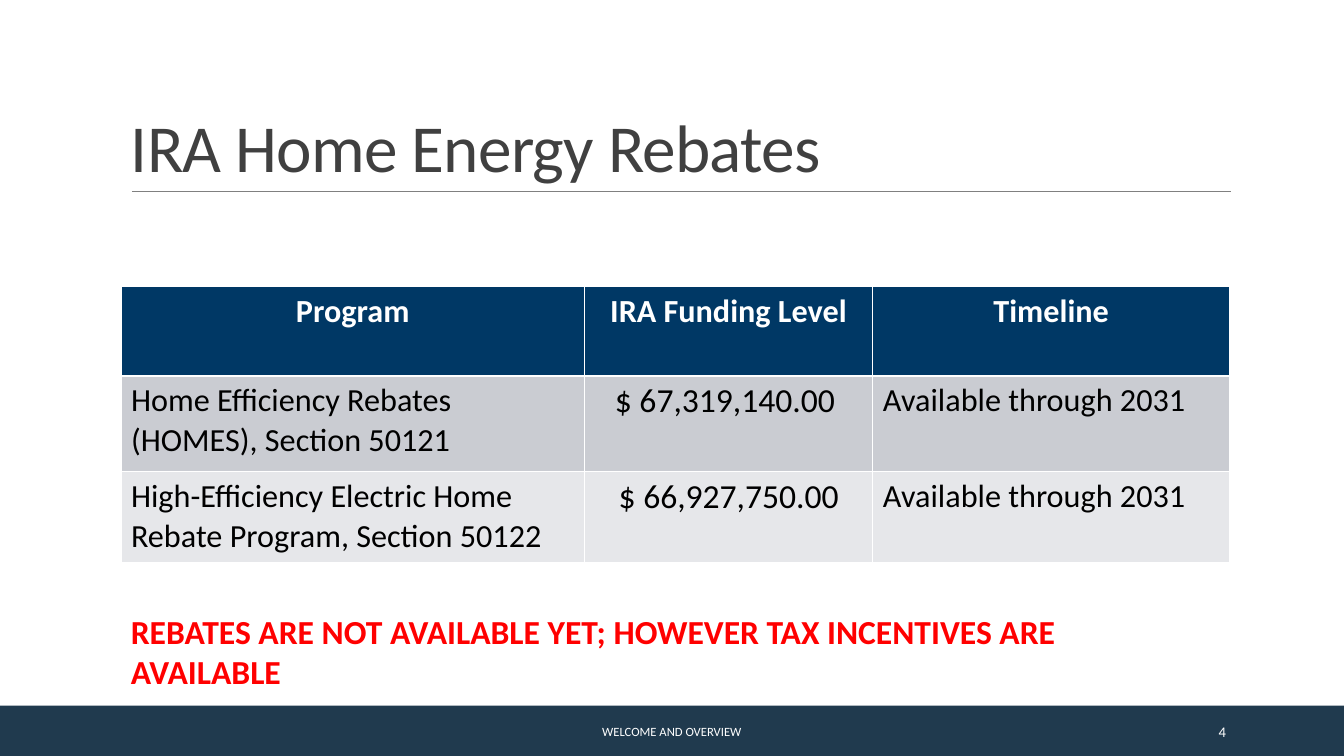
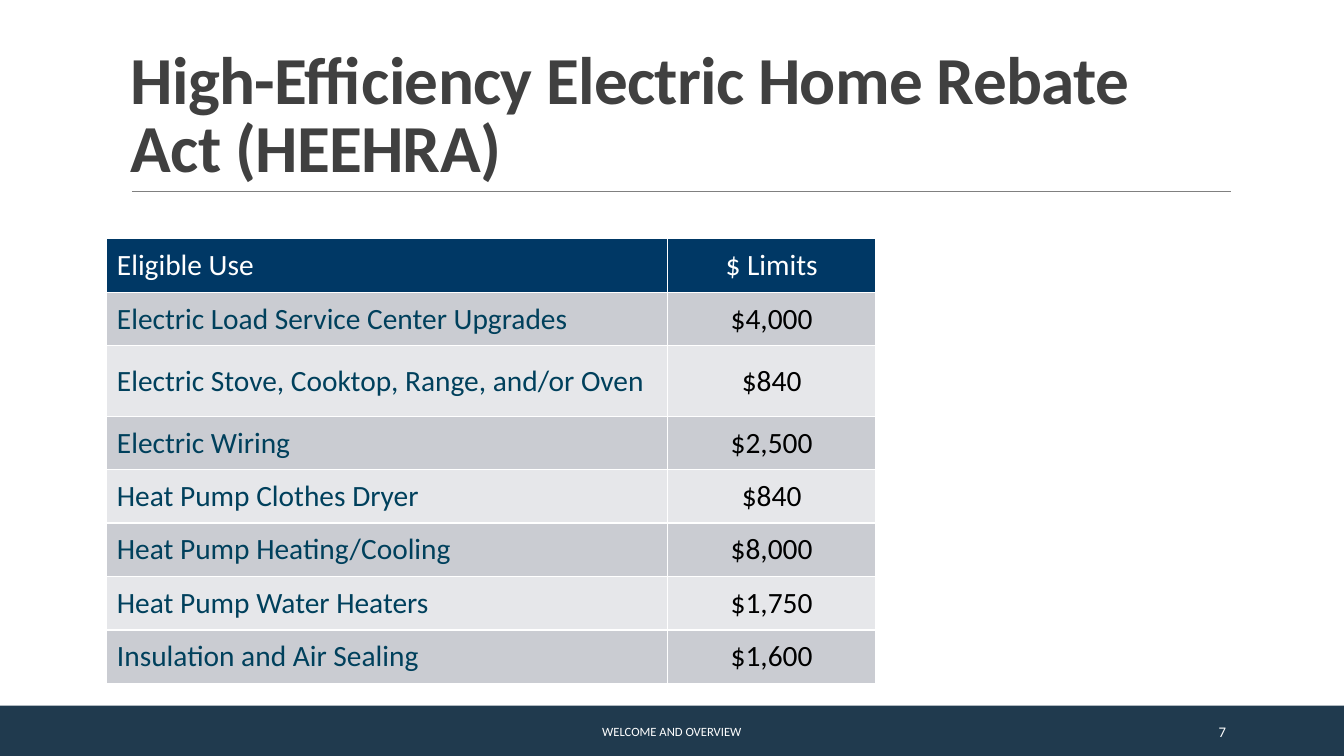
"""Build two slides on home energy rebates."""

from dataclasses import dataclass

import lxml.etree
import pptx
import pptx.dml.color
import pptx.enum.shapes
import pptx.enum.text
import pptx.oxml.ns
import pptx.presentation
import pptx.slide
import pptx.text.text
import pptx.util

RGB = pptx.dml.color.RGBColor
ALIGN = pptx.enum.text.PP_ALIGN
ANCHOR = pptx.enum.text.MSO_ANCHOR

WHITE = RGB(0xFF, 0xFF, 0xFF)
BLACK = RGB(0x00, 0x00, 0x00)
RED = RGB(0xFF, 0x00, 0x00)
GREY = RGB(0x40, 0x40, 0x40)
RULE = RGB(0x80, 0x80, 0x80)
BAND = RGB(0x20, 0x3A, 0x4E)
NAVY = RGB(0x00, 0x38, 0x65)
TEAL = RGB(0x00, 0x40, 0x5C)
STRIPES = (RGB(0xCA, 0xCC, 0xD2), RGB(0xE6, 0xE7, 0xEA))

FONT = "Calibri"
WIDE = pptx.util.Inches(13.33)
HIGH = pptx.util.Inches(7.5)


@dataclass(frozen=True)
class Box:
    """Place and size in percent of the slide."""

    left: float
    top: float
    width: float
    height: float


@dataclass(frozen=True)
class Style:
    """Look of a paragraph."""

    size: float
    color: RGB
    bold: bool = False
    align: ALIGN = ALIGN.LEFT


@dataclass(frozen=True)
class Grid:
    """Table with its column widths and row heights in percent."""

    left: float
    top: float
    cols: tuple[float, ...]
    rows: tuple[float, ...]
    head: tuple[Style, ...]
    body: tuple[Style, ...]
    anchor: ANCHOR
    cells: tuple[tuple[str, ...], ...]


TITLE = Box(9, 4.13, 82.5, 21.2)
FOOT = Box(30.22, 94.13, 39.53, 5.33)
PAGE = Box(81.22, 94.13, 10.73, 5.33)
NOTE = Box(9, 80.13, 71.48, 12.13)

HEAD = Style(23, WHITE, True, ALIGN.CENTER)
PLAIN = Style(23, BLACK)
FUNDS = Grid(
    9, 37.87, (34.5, 21.45, 26.55), (11.87, 12.67, 12),
    (HEAD,) * 3, (PLAIN, Style(24, BLACK, align=ALIGN.CENTER), PLAIN), ANCHOR.TOP,
    (
        ("Program", "IRA Funding Level", "Timeline"),
        ("Home Efficiency Rebates (HOMES), Section 50121", "$ 67,319,140.00 ",
         "Available through 2031"),
        ("High-Efficiency Electric Home Rebate Program, Section 50122",
         "$ 66,927,750.00", "Available through 2031"),
    ),
)
LIMITS = Grid(
    7.95, 31.6, (41.7, 15.53), (7.07, 7.07, 9.33) + (7.07,) * 5,
    (Style(21, WHITE), Style(21, WHITE, align=ALIGN.CENTER)),
    (Style(21, TEAL), Style(21, BLACK, align=ALIGN.CENTER)), ANCHOR.MIDDLE,
    (
        ("Eligible Use", "$ Limits"),
        ("Electric Load Service Center Upgrades", "$4,000"),
        ("Electric Stove, Cooktop, Range, and/or Oven", "$840"),
        ("Electric Wiring", "$2,500"),
        ("Heat Pump Clothes Dryer", "$840"),
        ("Heat Pump Heating/Cooling", "$8,000"),
        ("Heat Pump Water Heaters", "$1,750"),
        ("Insulation and Air Sealing", "$1,600"),
    ),
)


def across(share: float) -> int:
    """Turn a percent of the slide width into a length."""
    return round(WIDE * share / 100)


def down(share: float) -> int:
    """Turn a percent of the slide height into a length."""
    return round(HIGH * share / 100)


def place(box: Box) -> tuple[int, int, int, int]:
    """Turn a box into left, top, width and height."""
    return across(box.left), down(box.top), across(box.width), down(box.height)


def write(para: pptx.text.text._Paragraph, text: str, style: Style) -> None:
    """Fill a paragraph and style it."""
    para.text = text
    para.alignment = style.align
    para.font.name = FONT
    para.font.size = pptx.util.Pt(style.size)
    para.font.bold = style.bold
    para.font.color.rgb = style.color


def label(slide: pptx.slide.Slide, box: Box, text: str, style: Style,
          anchor: ANCHOR) -> pptx.text.text._Paragraph:
    """Add a wrapped text box and return its paragraph."""
    frame = slide.shapes.add_textbox(*place(box)).text_frame
    frame.word_wrap = True
    frame.vertical_anchor = anchor
    para = frame.paragraphs[0]
    write(para, text, style)
    return para


def start(deck: pptx.presentation.Presentation, title: str, bold: bool,
          page: int) -> pptx.slide.Slide:
    """Add a slide with band, rule, title and footer."""
    slide = deck.slides.add_slide(deck.slide_layouts[6])
    band = slide.shapes.add_shape(
        pptx.enum.shapes.MSO_SHAPE.RECTANGLE, *place(Box(0, 93.33, 100, 6.67)))
    band.shadow.inherit = False
    band.fill.solid()
    band.fill.fore_color.rgb = BAND
    band.line.fill.background()

    rule = slide.shapes.add_connector(
        pptx.enum.shapes.MSO_CONNECTOR.STRAIGHT,
        across(9.82), down(25.33), across(91.58), down(25.33))
    rule.line.color.rgb = RULE
    rule.line.width = pptx.util.Pt(0.5)
    lxml.etree.SubElement(rule._element.spPr, pptx.oxml.ns.qn("a:effectLst"))

    para = label(slide, TITLE, title, Style(48, GREY, bold), ANCHOR.BOTTOM)
    para.line_spacing = 0.85
    para.font._element.set("spc", "-50")
    label(slide, FOOT, "WELCOME AND OVERVIEW",
          Style(9, WHITE, align=ALIGN.CENTER), ANCHOR.MIDDLE)
    label(slide, PAGE, str(page),
          Style(10.5, WHITE, align=ALIGN.RIGHT), ANCHOR.MIDDLE)
    return slide


def tabulate(slide: pptx.slide.Slide, grid: Grid) -> None:
    """Add a table with a navy head and striped rows."""
    box = Box(grid.left, grid.top, sum(grid.cols), sum(grid.rows))
    table = slide.shapes.add_table(
        len(grid.rows), len(grid.cols), *place(box)).table
    for col, width in zip(table.columns, grid.cols):
        col.width = across(width)
    for num, (row, height) in enumerate(zip(table.rows, grid.rows)):
        row.height = down(height)
        styles = grid.body if num else grid.head
        fill = STRIPES[(num - 1) % 2] if num else NAVY
        for cell, text, style in zip(row.cells, grid.cells[num], styles):
            cell.vertical_anchor = grid.anchor
            cell.fill.solid()
            cell.fill.fore_color.rgb = fill
            write(cell.text_frame.paragraphs[0], text, style)


def main() -> None:
    """Build and save the deck."""
    deck = pptx.Presentation()
    deck.slide_width, deck.slide_height = WIDE, HIGH

    slide = start(deck, "IRA Home Energy Rebates", False, 4)
    tabulate(slide, FUNDS)
    label(slide, NOTE,
          "REBATES ARE NOT AVAILABLE YET; HOWEVER TAX INCENTIVES ARE AVAILABLE",
          Style(24, RED, True), ANCHOR.TOP)

    slide = start(
        deck, "High-Efficiency Electric Home Rebate Act (HEEHRA)", True, 7)
    tabulate(slide, LIMITS)

    deck.save("out.pptx")


if __name__ == "__main__":
    main()
